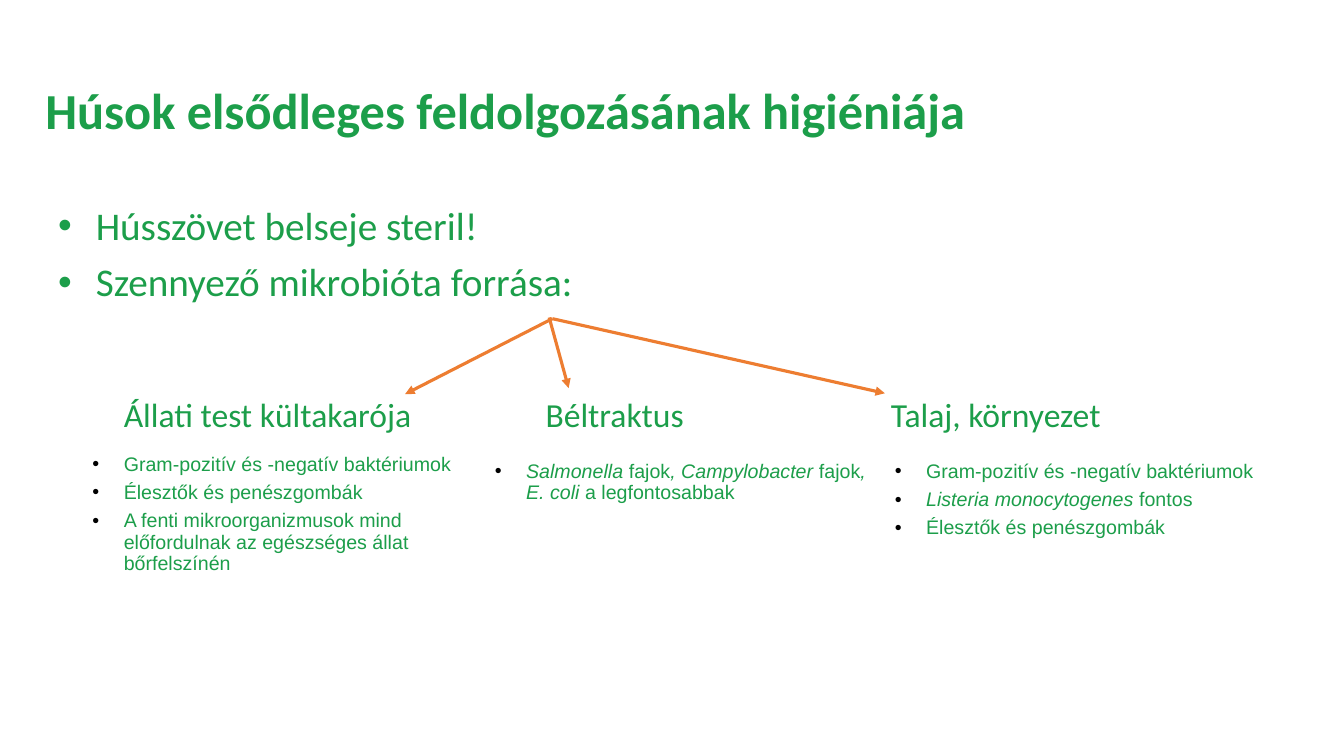
from dataclasses import dataclass

from lxml.etree import SubElement
from pptx import Presentation
from pptx.dml.color import RGBColor as Rgb
from pptx.enum.shapes import MSO_CONNECTOR as Connector
from pptx.enum.text import MSO_ANCHOR as Anchor, MSO_AUTO_SIZE as AutoSize, PP_ALIGN as Align
from pptx.oxml.ns import qn
from pptx.util import Cm, Pt


@dataclass(frozen=True)
class Theme:
    """Colours, fonts and type sizes of the slide."""
    green: str = "1C9E4A"
    orange: str = "ED7D31"
    black: str = "000000"
    heading_font: str = "Calibri"
    detail_font: str = "Arial"
    title_size: int = 36
    list_size: int = 28
    source_size: int = 24
    detail_size: int = 14
    arrow_width: float = 2.25


THEME = Theme()
TITLE = "Húsok elsődleges feldolgozásának higiéniája"
STATEMENTS = ["Hússzövet belseje steril!", "Szennyező mikrobióta forrása:"]
SOURCES = [
    (2.87, "Állati test kültakarója"),
    (13.5, "Béltraktus"),
    (22.2, "Talaj, környezet"),
]
ARROWS = [
    (13.84, 8.0, 14.33, 9.78),
    (13.92, 8.03, 10.21, 9.93),
    (13.92, 8.03, 22.3, 9.91),
]
BACTERIA = [("Gram-pozitív és -negatív baktériumok", False)]
FUNGI = [("Élesztők és penészgombák", False)]
DETAILS = [
    (2.08, 11.33, 4.62, [
        BACTERIA,
        FUNGI,
        [("A fenti mikroorganizmusok mind előfordulnak az egészséges állat bőrfelszínén", False)],
    ]),
    (12.22, 11.51, 2.64, [
        [("Salmonella ", True), ("fajok", False), (", Campylobacter ", True), ("fajok", False),
         (", E. coli", True), (" a legfontosabbak", False)],
    ]),
    (22.3, 11.51, 4.27, [
        BACTERIA,
        [("Listeria monocytogenes", True), (" fontos", False)],
        FUNGI,
    ]),
]


def place(shape, left, top, width, height):
    """Move and size a shape, in centimetres."""
    shape.left, shape.top, shape.width, shape.height = map(Cm, (left, top, width, height))


def add_span(para, text, font, size, bold=False, italic=False):
    """Add one green run to a paragraph."""
    span = para.add_run()
    span.text = text
    span.font.name = font
    span.font.size = Pt(size)
    span.font.bold = bold
    span.font.italic = italic
    span.font.color.rgb = Rgb.from_string(THEME.green)


def next_para(frame, gap=0):
    """Return the next paragraph to fill, spaced only after the first one."""
    first = not frame.paragraphs[0].runs
    para = frame.paragraphs[0] if first else frame.add_paragraph()
    para.space_before = Pt(0 if first else gap)
    para.line_spacing = 0.9
    para.alignment = Align.LEFT
    return para


def set_bullet(para, color, margin, hanging):
    """Give a paragraph a round bullet with a hanging indent."""
    props = para._p.get_or_add_pPr()
    props.set("marL", str(Cm(margin)))
    props.set("indent", str(-Cm(hanging)))
    SubElement(SubElement(props, qn("a:buClr")), qn("a:srgbClr")).set("val", color)
    SubElement(props, qn("a:buFont")).set("typeface", "Arial")
    SubElement(props, qn("a:buChar")).set("char", "•")


def fill_title(title):
    """Write the slide title."""
    place(title, 0.89, 1.02, 32.11, 3.68)
    frame = title.text_frame
    frame.auto_size = AutoSize.NONE
    frame.vertical_anchor = Anchor.MIDDLE
    add_span(next_para(frame), TITLE, THEME.heading_font, THEME.title_size, bold=True)


def fill_body(body):
    """Write the bulleted statements."""
    place(body, 0.89, 5.08, 32.11, 12.09)
    frame = body.text_frame
    frame.auto_size = AutoSize.NONE
    for statement in STATEMENTS:
        para = next_para(frame, 10)
        set_bullet(para, THEME.green, 1.27, 0.95)
        add_span(para, statement, THEME.heading_font, THEME.list_size)


def add_box(page, left, top, width, height):
    """Add a wrapping text box and return its text frame."""
    frame = page.shapes.add_textbox(*map(Cm, (left, top, width, height))).text_frame
    frame.word_wrap = True
    frame.auto_size = AutoSize.SHAPE_TO_FIT_TEXT
    return frame


def add_source(page, left, name):
    """Add the heading of one contamination source."""
    frame = add_box(page, left, 9.92, 8.6, 1.19)
    add_span(next_para(frame), name, THEME.heading_font, THEME.source_size)


def add_details(page, left, top, height, items):
    """Add the bulleted details under one source."""
    frame = add_box(page, left, top, 10.3, height)
    for spans in items:
        para = next_para(frame, 5)
        set_bullet(para, THEME.black, 0.79, 0.79)
        for text, italic in spans:
            add_span(para, text, THEME.detail_font, THEME.detail_size, italic=italic)


def add_arrow(page, *ends):
    """Add a straight arrow from its start to its end point."""
    arrow = page.shapes.add_connector(Connector.STRAIGHT, *map(Cm, ends))
    arrow.line.color.rgb = Rgb.from_string(THEME.orange)
    arrow.line.width = Pt(THEME.arrow_width)
    SubElement(arrow.line._get_or_add_ln(), qn("a:tailEnd")).set("type", "triangle")
    SubElement(arrow._element.spPr, qn("a:effectLst"))


def main():
    """Build the slide and save the deck."""
    deck = Presentation()
    deck.slide_width, deck.slide_height = Cm(33.87), Cm(19.05)
    page = deck.slides.add_slide(deck.slide_layouts[1])
    fill_title(page.shapes.title)
    fill_body(page.placeholders[1])
    for source in SOURCES:
        add_source(page, *source)
    for ends in ARROWS:
        add_arrow(page, *ends)
    for details in DETAILS:
        add_details(page, *details)
    deck.save("out.pptx")


if __name__ == "__main__":
    main()
